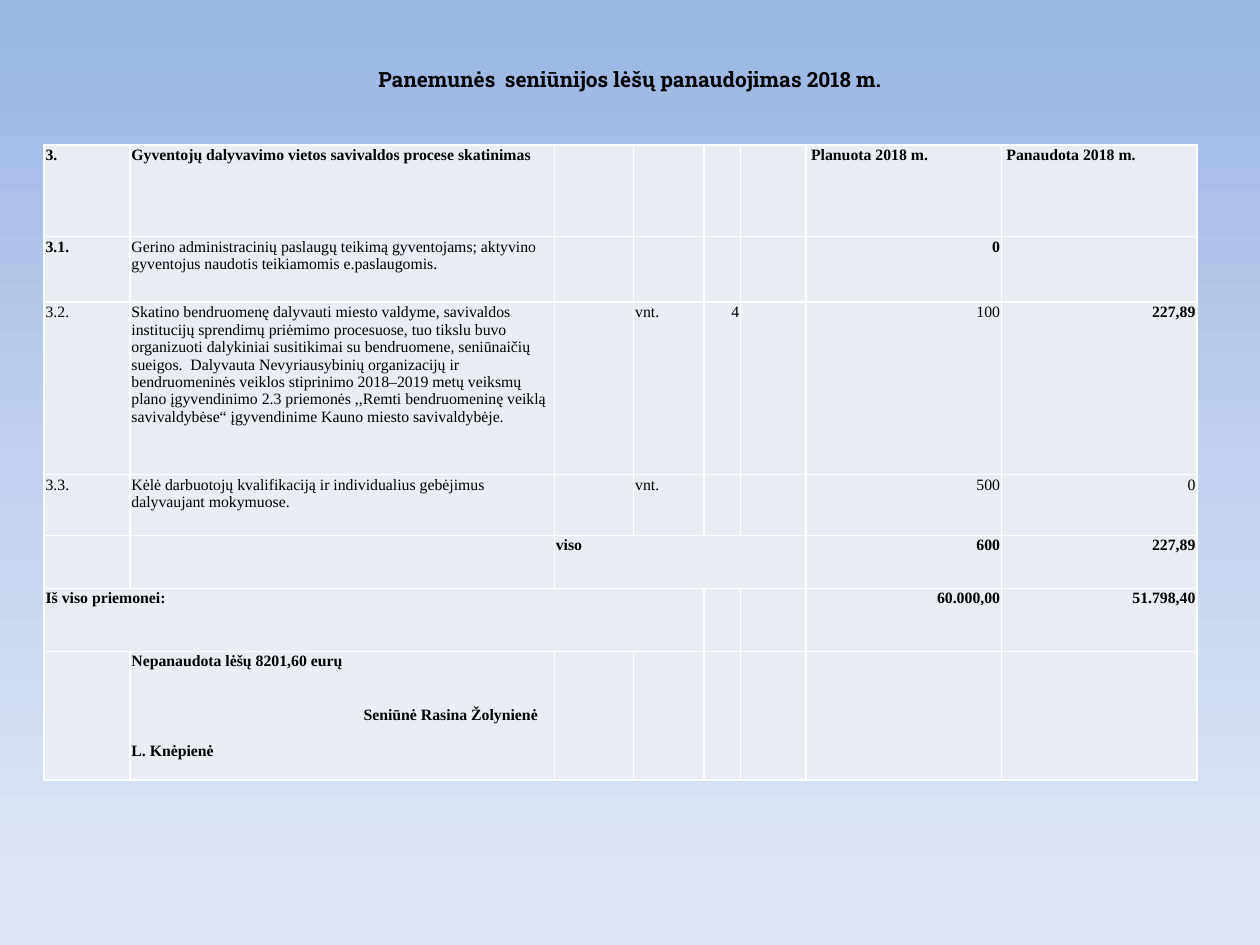
import copy
from dataclasses import dataclass

import pptx
import pptx.dml.color
import pptx.enum.text
import pptx.oxml
import pptx.oxml.ns
import pptx.util

Cm = pptx.util.Cm
Pt = pptx.util.Pt
Align = pptx.enum.text.PP_ALIGN
Anchor = pptx.enum.text.MSO_ANCHOR
rgb = pptx.dml.color.RGBColor.from_string


@dataclass(frozen=True)
class Theme:
    sky: tuple = ((0, "9AB5E4"), (0.5, "C2D1ED"), (1, "E1E8F5"))
    ink: str = "000000"
    cell: str = "E9EDF4"
    rule: str = "FFFFFF"
    title_font: str = "Roboto Slab"
    table_font: str = "Times New Roman"
    title_size: float = 12
    title_gap_size: float = 22
    table_size: float = 9
    rule_width: float = 1


THEME = Theme()

COLUMN_WIDTHS = (1.73, 8.56, 1.6, 1.42, 0.74, 1.32, 3.94, 3.94)
ROW_HEIGHTS = (1.85, 1.32, 3.48, 1.22, 1.07, 1.27, 2.59)
MERGES = (((4, 2), (4, 5)), ((5, 0), (5, 3)))
DETAIL_ROWS = (1, 2, 3)
BOLD_DETAILS = ((1, 0), (1, 6), (2, 7))
FIRST_NUMBER_COLUMN = 4
HEADING_INDENT = 0.1

SPENDING = (
    ("3.", "Gyventojų dalyvavimo vietos savivaldos procese skatinimas",
     "", "", "", "", "Planuota 2018 m.", "Panaudota 2018 m."),
    ("3.1.", "Gerino administracinių paslaugų teikimą gyventojams; aktyvino "
     "gyventojus naudotis teikiamomis e.paslaugomis.",
     "", "", "", "", "0", ""),
    ("3.2.", "Skatino bendruomenę dalyvauti miesto valdyme, savivaldos "
     "institucijų sprendimų priėmimo procesuose, tuo tikslu buvo organizuoti "
     "dalykiniai susitikimai su bendruomene, seniūnaičių sueigos.  Dalyvauta "
     "Nevyriausybinių organizacijų ir bendruomeninės veiklos stiprinimo "
     "2018–2019 metų veiksmų plano įgyvendinimo 2.3 priemonės ,,Remti "
     "bendruomeninę veiklą savivaldybėse“ įgyvendinime Kauno miesto "
     "savivaldybėje.",
     "", "vnt.", "4", "", "100", "227,89"),
    ("3.3.", "Kėlė darbuotojų kvalifikaciją ir individualius gebėjimus "
     "dalyvaujant mokymuose.",
     "", "vnt.", "", "", "500", "0"),
    ("", "", "viso", "", "", "", "600", "227,89"),
    ("Iš viso priemonei:", "", "", "", "", "", "60.000,00", "51.798,40"),
    ("", "Nepanaudota lėšų 8201,60 eurų", "", "", "", "", "", ""),
)
SIGNATURES = (("Seniūnė Rasina Žolynienė", 20.7, 4.68), ("L. Knėpienė", 10.35, 0))


def apply_format(target, values):
    for name, value in values.items():
        setattr(target, name, value)


def add_run(paragraph, text, font, size, bold):
    run = paragraph.add_run()
    run.text = text
    apply_format(run.font, {"name": font, "size": Pt(size), "bold": bold})
    run.font.color.rgb = rgb(THEME.ink)


def paint_background(slide):
    fill = slide.background.fill
    fill.gradient()
    fill.gradient_angle = 270
    stops = slide.element.find(".//" + pptx.oxml.ns.qn("a:gsLst"))
    stops.insert(1, copy.deepcopy(stops[0]))
    for stop, (position, color) in zip(fill.gradient_stops, THEME.sky):
        stop.position = position
        stop.color.rgb = rgb(color)


def add_title(slide, left, top, width, height):
    frame = slide.shapes.add_textbox(Cm(left), Cm(top), Cm(width), Cm(height)).text_frame
    apply_format(frame, {"word_wrap": True, "vertical_anchor": Anchor.MIDDLE})
    heading = frame.paragraphs[0]
    heading.alignment = Align.CENTER
    for text, size in (
        ("Panemunės", THEME.title_size),
        (" ", THEME.title_gap_size),
        ("seniūnijos lėšų panaudojimas 2018 m.", THEME.title_size),
    ):
        add_run(heading, text, THEME.title_font, size, True)


def add_borders(cell):
    properties = cell._tc.get_or_add_tcPr()
    for position, side in enumerate(("lnL", "lnR", "lnT", "lnB")):
        border = pptx.oxml.parse_xml(
            f'<a:{side} {pptx.oxml.ns.nsdecls("a")} w="{Pt(THEME.rule_width)}">'
            f'<a:solidFill><a:srgbClr val="{THEME.rule}"/></a:solidFill></a:{side}>'
        )
        properties.insert(position, border)


def fill_cell(cell, text, row, column):
    indent = HEADING_INDENT if row == 0 and column >= FIRST_NUMBER_COLUMN else 0.03
    apply_format(cell, {
        "margin_left": Cm(indent),
        "margin_right": Cm(0.03),
        "margin_top": Cm(0.03),
        "margin_bottom": 0,
        "vertical_anchor": Anchor.TOP,
    })
    cell.fill.solid()
    cell.fill.fore_color.rgb = rgb(THEME.cell)
    add_borders(cell)
    if text:
        line = cell.text_frame.paragraphs[0]
        is_number = row > 0 and column >= FIRST_NUMBER_COLUMN
        line.alignment = Align.RIGHT if is_number else Align.LEFT
        bold = row not in DETAIL_ROWS or (row, column) in BOLD_DETAILS
        add_run(line, text, THEME.table_font, THEME.table_size, bold)


def add_signatures(cell):
    for name, space, indent in SIGNATURES:
        line = cell.text_frame.add_paragraph()
        line.space_before = Pt(space)
        line._p.get_or_add_pPr().set("marL", str(Cm(indent)))
        add_run(line, name, THEME.table_font, THEME.table_size, True)


def add_spending_table(slide, left, top, width, height):
    table = slide.shapes.add_table(
        len(ROW_HEIGHTS), len(COLUMN_WIDTHS), Cm(left), Cm(top), Cm(width), Cm(height)
    ).table
    apply_format(table, {"first_row": False, "horz_banding": False})
    for column, share in zip(table.columns, COLUMN_WIDTHS):
        column.width = Cm(width * share / sum(COLUMN_WIDTHS))
    for row, share in zip(table.rows, ROW_HEIGHTS):
        row.height = Cm(height * share / sum(ROW_HEIGHTS))
    for row, texts in enumerate(SPENDING):
        for column, text in enumerate(texts):
            fill_cell(table.cell(row, column), text, row, column)
    for first, last in MERGES:
        table.cell(*first).merge(table.cell(*last))
    add_signatures(table.cell(6, 1))


def main():
    deck = pptx.Presentation()
    apply_format(deck, {"slide_width": Cm(25.4), "slide_height": Cm(19.05)})
    slide = deck.slides.add_slide(deck.slide_layouts[6])
    paint_background(slide)
    add_title(slide, 1.27, 0.76, 22.86, 1.37)
    add_spending_table(slide, 0.89, 2.92, 23.24, 12.8)
    deck.save("out.pptx")


if __name__ == "__main__":
    main()
